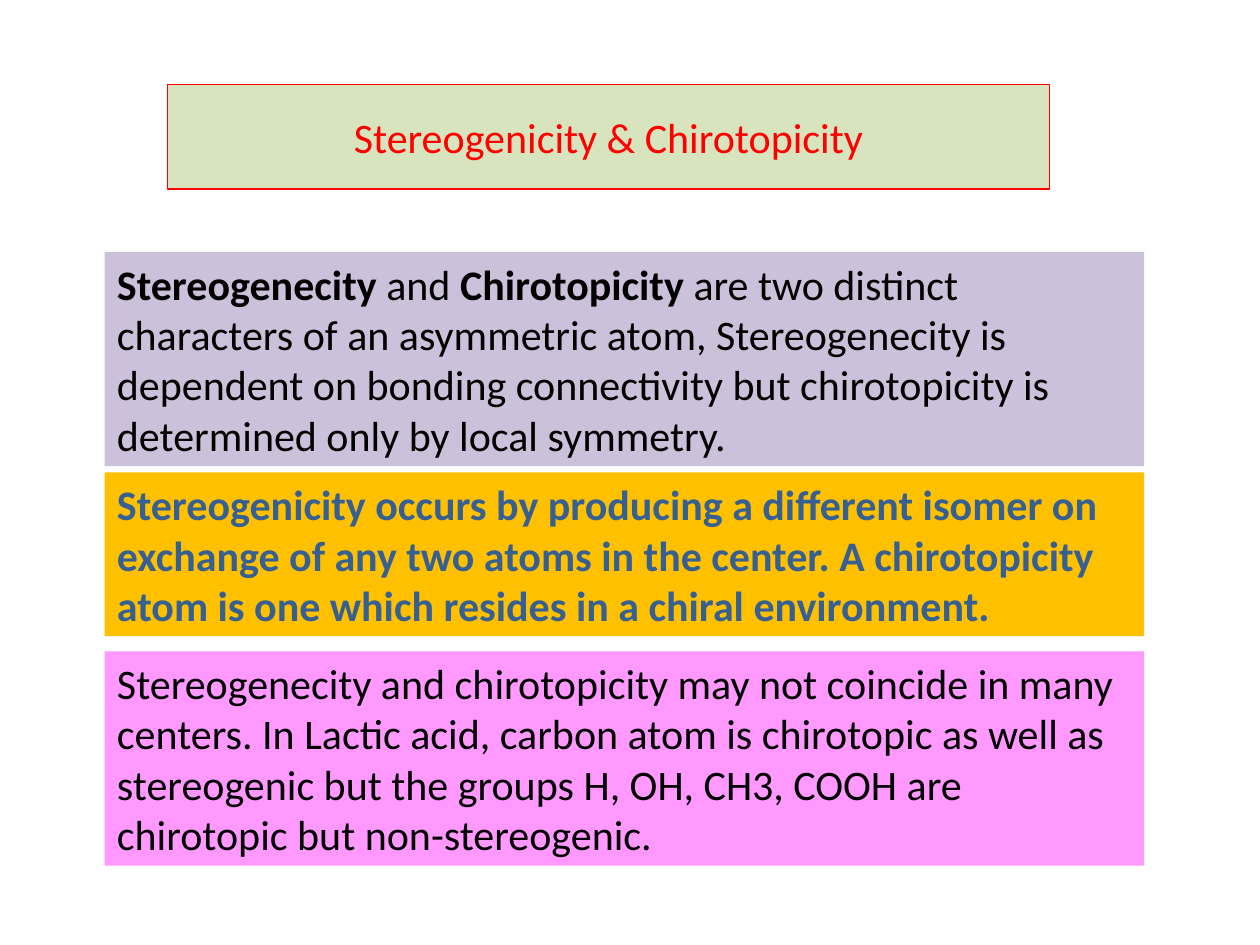
from dataclasses import dataclass

from pptx import Presentation
from pptx.dml.color import RGBColor
from pptx.enum.text import MSO_ANCHOR, PP_ALIGN
from pptx.util import Inches, Pt

CENTER, LEFT = PP_ALIGN.CENTER, PP_ALIGN.LEFT
MIDDLE, TOP = MSO_ANCHOR.MIDDLE, MSO_ANCHOR.TOP


@dataclass(frozen=True)
class Theme:
    font: str = "Calibri"
    size: int = 24
    black: str = "000000"
    red: str = "FF0000"
    blue: str = "376092"
    green: str = "D7E4BD"
    lilac: str = "CCC1DA"
    amber: str = "FFC000"
    pink: str = "FF99FF"
    border: float = 0.75


THEME = Theme()
WIDTH, HEIGHT = 10, 7.5
TITLE = "Stereogenicity & Chirotopicity"
TITLE_AREA = (1.33, 0.67, 7, 0.83)
PANEL_LEFT, PANEL_WIDTH = 0.83, 8.25
LINE_HEIGHT, PADDING = 0.4, 0.1

PANELS = [
    {"top": 2, "lines": 4, "fill": THEME.lilac, "color": THEME.black, "spans": [
        ("Stereogenecity", True),
        (" and ", False),
        ("Chirotopicity", True),
        (" are two distinct characters of an asymmetric atom, Stereogenecity is "
         "dependent on bonding connectivity but chirotopicity is determined only "
         "by local symmetry.", False)]},
    {"top": 3.75, "lines": 3, "fill": THEME.amber, "color": THEME.blue, "spans": [
        ("Stereogenicity occurs by producing a different isomer on exchange of any "
         "two atoms in the center. A chirotopicity atom is one which resides in a "
         "chiral environment.", True)]},
    {"top": 5.17, "lines": 4, "fill": THEME.pink, "color": THEME.black, "spans": [
        ("Stereogenecity and chirotopicity may not coincide in many centers. In "
         "Lactic acid, carbon atom is chirotopic as well as stereogenic but the "
         "groups H, OH, CH3, COOH are chirotopic but non-stereogenic.", False)]},
]


def add_box(page, area, fill, color, spans, align=LEFT, anchor=TOP):
    box = page.shapes.add_textbox(*map(Inches, area))
    box.fill.solid()
    box.fill.fore_color.rgb = RGBColor.from_string(fill)
    frame = box.text_frame
    frame.word_wrap = True
    frame.vertical_anchor = anchor
    para = frame.paragraphs[0]
    para.alignment = align
    for text, bold in spans:
        span = para.add_run()
        span.text = text
        span.font.name = THEME.font
        span.font.size = Pt(THEME.size)
        span.font.bold = bold
        span.font.color.rgb = RGBColor.from_string(color)
    return box


def main():
    deck = Presentation()
    deck.slide_width, deck.slide_height = Inches(WIDTH), Inches(HEIGHT)
    page = deck.slides.add_slide(deck.slide_layouts[6])

    title = add_box(page, TITLE_AREA, THEME.green, THEME.red,
                    [(TITLE, False)], CENTER, MIDDLE)
    title.line.color.rgb = RGBColor.from_string(THEME.red)
    title.line.width = Pt(THEME.border)

    for panel in PANELS:
        height = panel["lines"] * LINE_HEIGHT + PADDING
        area = (PANEL_LEFT, panel["top"], PANEL_WIDTH, height)
        add_box(page, area, panel["fill"], panel["color"], panel["spans"])

    deck.save("out.pptx")


if __name__ == "__main__":
    main()
